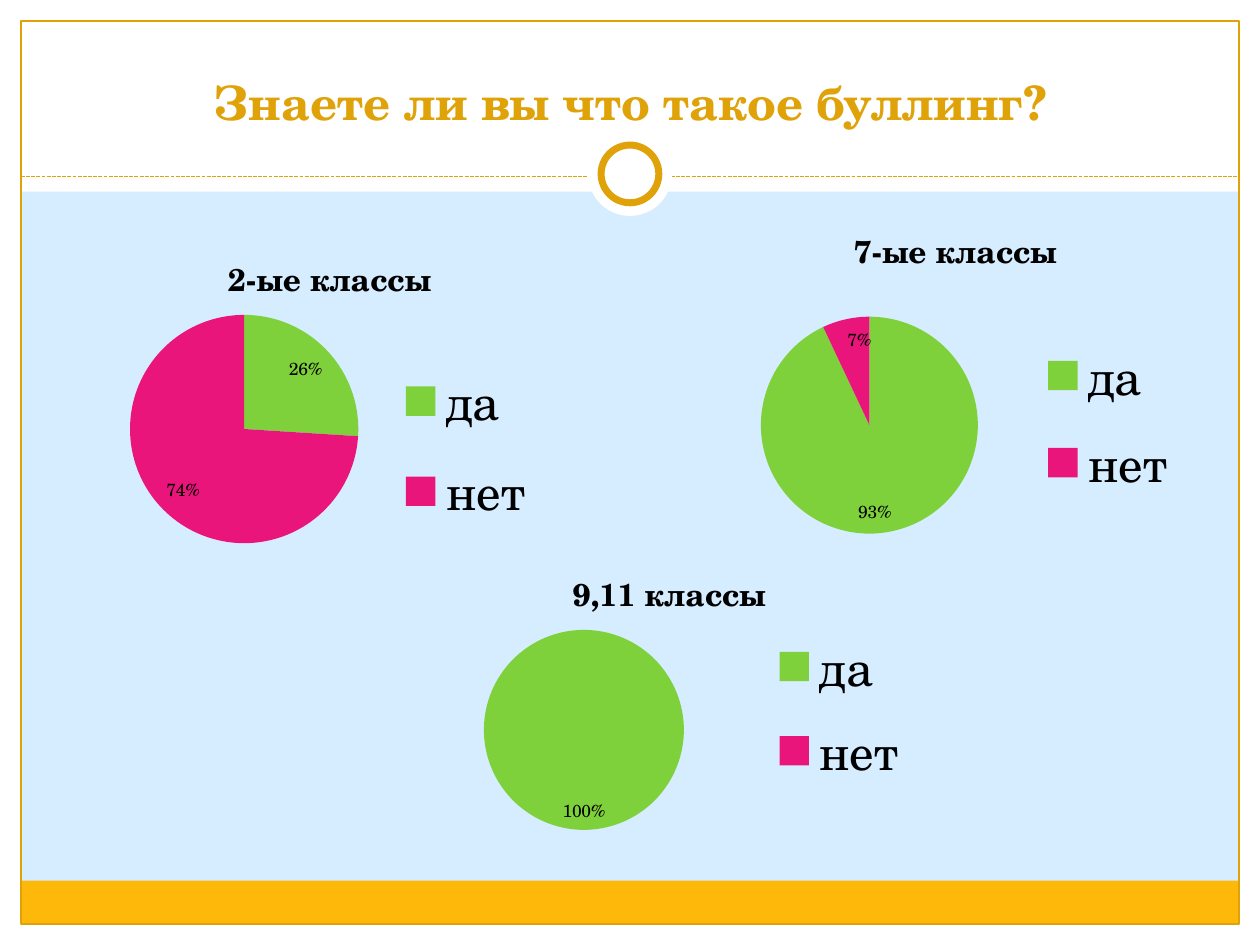
from dataclasses import dataclass

from lxml import etree
from pptx import Presentation
from pptx.chart import data as cd
from pptx.dml import color
from pptx.enum import chart as ch, dml, shapes, text
from pptx.oxml import ns
from pptx.util import Pt


@dataclass(frozen=True)
class Theme:
    font: str = "TeX Gyre Schola"
    sky: str = "D6ECFF"
    white: str = "FFFFFF"
    black: str = "000000"
    amber: str = "FEB80A"
    gold: str = "E0A209"
    slices: tuple = ("7FD13B", "EA157A")
    head: float = 27
    title: float = 18
    legend: float = 28
    label: float = 10


THEME = Theme()
WIDE, HIGH, EDGE = 720, 540, 12
RULE_Y = 100.8

# heading, values, chart box, heading corner, pie (left, top, size), legend box
PIES = [
    ("2-ые классы", (26, 74), (16.5, 124, 337.5, 196.5),
     (127, 140), (74.3, 180, 130.5), (223.5, 198, 85, 114)),
    ("7-ые классы", (93, 7), (388, 106.5, 309.5, 208),
     (484.5, 124), (434.8, 181, 124), (590.5, 185, 85, 109)),
    ("9,11 классы", (100, 0), (230.5, 304, 298, 199.5),
     (324, 320), (276.5, 360, 114.3), (437, 353, 85, 104)),
]


def rgb(code):
    return color.RGBColor.from_string(code)


def style(font, size, code=THEME.black, bold=False):
    font.name, font.size, font.bold = THEME.font, Pt(size), bold
    font.color.rgb = rgb(code)


def add_form(slide, kind, box, fill=None, line=None, width=0.75):
    form = slide.shapes.add_shape(kind, *map(Pt, box))
    form.shadow.inherit = False
    if fill:
        form.fill.solid()
        form.fill.fore_color.rgb = rgb(fill)
    else:
        form.fill.background()
    if line:
        form.line.color.rgb = rgb(line)
        form.line.width = Pt(width)
    else:
        form.line.fill.background()


def add_rule(slide, left, right, y):
    rule = slide.shapes.add_connector(
        shapes.MSO_CONNECTOR.STRAIGHT, Pt(left), Pt(y), Pt(right), Pt(y))
    rule.line.color.rgb = rgb(THEME.gold)
    rule.line.width = Pt(0.75)
    rule.line.dash_style = dml.MSO_LINE.SQUARE_DOT
    etree.SubElement(rule._element.spPr, ns.qn("a:effectLst"))


def add_ring(slide, size, line=None):
    box = ((WIDE - size) / 2, 99.4 - size / 2, size, size)
    add_form(slide, shapes.MSO_SHAPE.OVAL, box, THEME.white, line, 4)


def add_frame(slide):
    rect = shapes.MSO_SHAPE.RECTANGLE
    # White margins
    for box in ((0, HIGH - EDGE, WIDE, EDGE), (0, 0, WIDE, 109.5),
                (0, 0, EDGE, HIGH), (WIDE - EDGE, 0, EDGE, HIGH)):
        add_form(slide, rect, box, THEME.white)
    # Amber foot, gold border, dashed rule
    inner = WIDE - 2 * EDGE
    add_form(slide, rect, (EDGE, 503.3, inner, 24.5), THEME.amber)
    add_form(slide, rect, (EDGE, EDGE, inner, HIGH - 2 * EDGE),
             line=THEME.gold)
    add_rule(slide, EDGE, WIDE - EDGE, RULE_Y)
    # Ring on the rule
    add_ring(slide, 48)
    add_ring(slide, 33, THEME.gold)


def add_head(slide, words):
    head = slide.shapes.title
    head.left, head.top, head.width, head.height = map(Pt, (24, 18, 672, 60))
    frame = head.text_frame
    frame.text = words
    frame.vertical_anchor = text.MSO_ANCHOR.BOTTOM
    para = frame.paragraphs[0]
    para.alignment = text.PP_ALIGN.CENTER
    style(para.font, THEME.head, THEME.gold, True)
    # Bring in front of the white margins
    slide.shapes._spTree.append(head._element)


def place(node, index, frame, box, inner=False):
    """Fix a chart part at a box given in slide points."""
    for old in node.findall(ns.qn("c:layout")):
        node.remove(old)
    layout = etree.Element(ns.qn("c:layout"))
    manual = etree.SubElement(layout, ns.qn("c:manualLayout"))
    left, top, wide, high = frame
    parts = [("xMode", "edge"), ("yMode", "edge"),
             ("x", (box[0] - left) / wide), ("y", (box[1] - top) / high)]
    if inner:
        parts.insert(0, ("layoutTarget", "inner"))
    if len(box) == 4:
        parts += [("w", box[2] / wide), ("h", box[3] / high)]
    for tag, val in parts:
        etree.SubElement(manual, ns.qn("c:" + tag), val=str(val))
    node.insert(index, layout)


def add_pie(slide, name, vals, frame, corner, disc, key):
    data = cd.CategoryChartData()
    data.categories = ["да", "нет"]
    data.add_series("Series 1", vals)
    chart = slide.shapes.add_chart(
        ch.XL_CHART_TYPE.PIE, *map(Pt, frame), data).chart
    style(chart.font, THEME.label)

    # Heading
    chart.has_title = True
    title = chart.chart_title
    title.text_frame.text = name
    style(title.text_frame.paragraphs[0].font, THEME.title, bold=True)
    place(title._element, 1, frame, corner)

    # Legend
    chart.has_legend = True
    legend = chart.legend
    legend.position = ch.XL_LEGEND_POSITION.RIGHT
    legend.include_in_layout = False
    style(legend.font, THEME.legend)
    place(legend._element, 1, frame, key)

    # Slices and percentages
    plot = chart.plots[0]
    plot.vary_by_categories = True
    for i, code in enumerate(THEME.slices):
        fill = plot.series[0].points[i].format.fill
        fill.solid()
        fill.fore_color.rgb = rgb(code)
    plot.has_data_labels = True
    labels = plot.data_labels
    labels.show_percentage, labels.show_value = True, False
    labels.number_format, labels.number_format_is_linked = "0%;;", False
    labels.position = ch.XL_LABEL_POSITION.INSIDE_END
    style(labels.font, THEME.label)
    area = chart._chartSpace.chart.plotArea
    place(area, 0, frame, (*disc, disc[2]), inner=True)


def main():
    deck = Presentation()
    deck.slide_width, deck.slide_height = Pt(WIDE), Pt(HIGH)
    slide = deck.slides.add_slide(deck.slide_layouts[5])
    slide.background.fill.solid()
    slide.background.fill.fore_color.rgb = rgb(THEME.sky)
    add_frame(slide)
    add_head(slide, "Знаете ли вы что такое буллинг?")
    for pie in PIES:
        add_pie(slide, *pie)
    deck.save("out.pptx")


if __name__ == "__main__":
    main()
